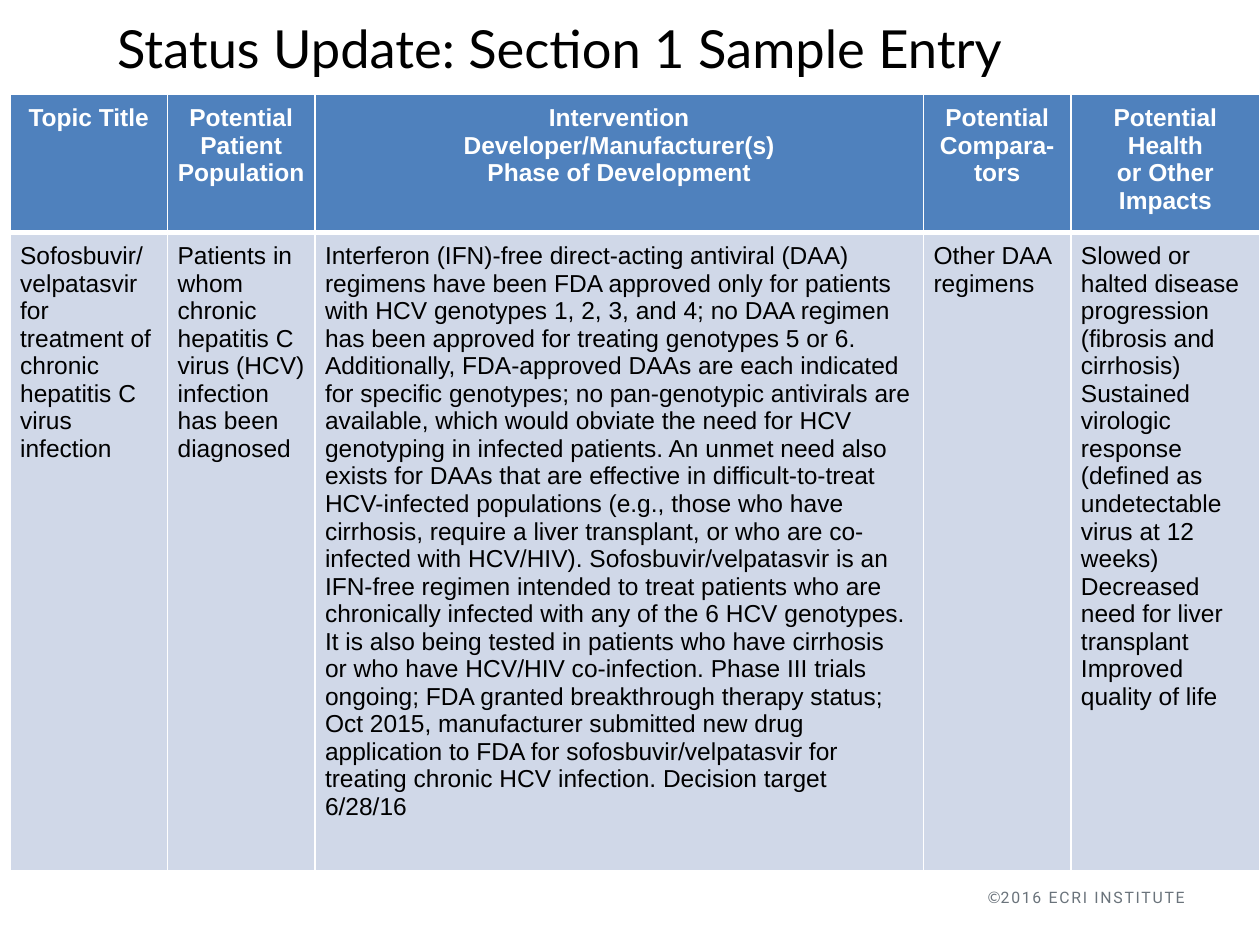
from lxml.etree import SubElement
from pptx import Presentation
from pptx.dml.color import RGBColor
from pptx.enum.text import MSO_ANCHOR as Anchor, MSO_AUTO_SIZE as AutoSize, PP_ALIGN as Align
from pptx.oxml.ns import qn
from pptx.util import Inches, Pt

COLUMN_WIDTHS = [1.25, 1.17, 4.83, 1.17, 1.5]
ROW_HEIGHTS = [0.77, 4.19]
HEADERS = [
    "Topic Title",
    "Potential Patient Population",
    "Intervention\nDeveloper/Manufacturer(s)\nPhase of Development",
    "Potential Compara-tors",
    "Potential Health\vor Other Impacts",
]
INTERVENTION_SENTENCES = [
    "Interferon (IFN)-free direct-acting antiviral (DAA) regimens have been FDA approved only "
    "for patients with HCV genotypes 1, 2, 3, and 4; no DAA regimen has been approved for "
    "treating genotypes 5 or 6.",
    "Additionally, FDA-approved DAAs are each indicated for specific genotypes; no pan-genotypic "
    "antivirals are available, which would obviate the need for HCV genotyping in infected "
    "patients.",
    "An unmet need also exists for DAAs that are effective in difficult-to-treat HCV-infected "
    "populations (e.g., those who have cirrhosis, require a liver transplant, or who are "
    "co-infected with HCV/HIV).",
    "Sofosbuvir/velpatasvir is an IFN-free regimen intended to treat patients who are "
    "chronically infected with any of the 6 HCV genotypes.",
    "It is also being tested in patients who have cirrhosis or who have HCV/HIV co-infection.",
    "Phase III trials ongoing; FDA granted breakthrough therapy status; Oct 2015, manufacturer "
    "submitted new drug application to FDA for sofosbuvir/velpatasvir for treating chronic HCV "
    "infection.",
    "Decision target 6/28/16",
]
ENTRY = [
    "Sofosbuvir/ velpatasvir for treatment of chronic hepatitis C virus infection",
    "Patients in whom chronic hepatitis C virus (HCV) infection has been diagnosed",
    " ".join(INTERVENTION_SENTENCES),
    "Other DAA regimens",
    "Slowed or halted disease progression (fibrosis and cirrhosis) Sustained virologic response "
    "(defined as undetectable virus at 12 weeks) Decreased need for liver transplant Improved "
    "quality of life",
]


def color(value):
    return RGBColor.from_string(value)


def set_font(font, name, size, value, bold=False):
    font.name, font.size, font.bold = name, Pt(size), bold
    font.color.rgb = color(value)


def place(shape, left, top, width, height):
    shape.left, shape.top = Inches(left), Inches(top)
    shape.width, shape.height = Inches(width), Inches(height)


def set_borders(cell, bottom):
    """Draw white cell edges, with the bottom edge of the given width in points."""
    properties = cell._tc.get_or_add_tcPr()
    for index, (side, width) in enumerate([("L", 1), ("R", 1), ("T", 1), ("B", bottom)]):
        line = properties.makeelement(qn(f"a:ln{side}"), {"w": str(Pt(width))})
        fill = SubElement(line, qn("a:solidFill"))
        SubElement(fill, qn("a:srgbClr"), val="FFFFFF")
        properties.insert(index, line)


class StatusPage:
    heading_font = "Lato"
    table_font = "Arial"
    footer_font = "Roboto"

    def __init__(self, deck):
        self.page = deck.slides.add_slide(deck.slide_layouts[5])

    def title(self, text, *bounds):
        title = self.page.shapes.title
        place(title, *bounds)
        frame = title.text_frame
        frame.text = text
        frame.auto_size = AutoSize.NONE
        frame.vertical_anchor = Anchor.TOP
        para = frame.paragraphs[0]
        para.alignment = Align.LEFT
        set_font(para.font, self.heading_font, 30, "000000")

    def copyright(self, text, *bounds):
        box = self.page.shapes.add_textbox(*map(Inches, bounds))
        frame = box.text_frame
        frame.word_wrap = True
        frame.auto_size = AutoSize.SHAPE_TO_FIT_TEXT
        para = frame.paragraphs[0]
        para.alignment = Align.RIGHT
        for content, font in [("©", self.heading_font), (text, self.footer_font)]:
            span = para.add_run()
            span.text = content
            set_font(span.font, font, 9, "6A737B")
        span.font._element.set("spc", "100")

    def table(self, rows, left, top):
        bounds = left, top, sum(COLUMN_WIDTHS), sum(ROW_HEIGHTS)
        table = self.page.shapes.add_table(
            len(rows), len(COLUMN_WIDTHS), *map(Inches, bounds)).table
        for column, width in zip(table.columns, COLUMN_WIDTHS):
            column.width = Inches(width)
        for index, (row, height, texts) in enumerate(zip(table.rows, ROW_HEIGHTS, rows)):
            row.height = Inches(height)
            for cell, text in zip(row.cells, texts):
                self.cell(cell, text, header=index == 0)

    def cell(self, cell, text, header):
        cell.text = text
        cell.margin_left = cell.margin_right = Inches(0.08)
        cell.margin_top = cell.margin_bottom = Inches(0.08)
        cell.fill.solid()
        cell.fill.fore_color.rgb = color("4F81BD" if header else "D0D8E8")
        set_borders(cell, bottom=3 if header else 1)
        for para in cell.text_frame.paragraphs:
            para.alignment = Align.CENTER if header else Align.LEFT
            set_font(para.font, self.table_font, 14, "FFFFFF" if header else "000000", header)


def main():
    deck = Presentation()
    deck.slide_width, deck.slide_height = Inches(10), Inches(7.5)
    status = StatusPage(deck)
    status.copyright("2016 ECRI INSTITUTE", 7.08, 7, 2.42, 0.25)
    status.title("Status Update: Section 1 Sample Entry", 0.83, 0.08, 8.67, 1.25)
    status.table([HEADERS, ENTRY], 0.08, 0.75)
    deck.save("out.pptx")


if __name__ == "__main__":
    main()
